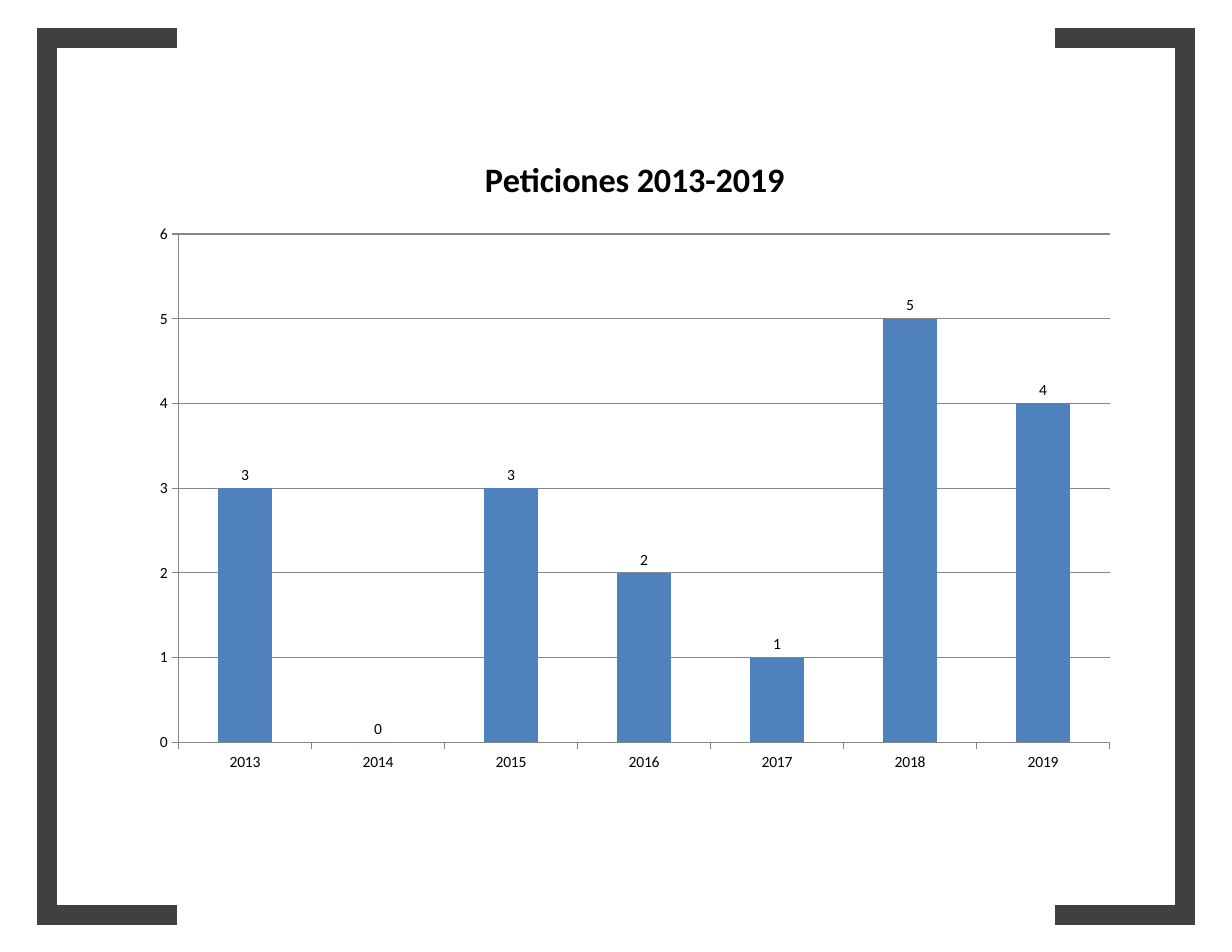
from dataclasses import dataclass

from lxml.etree import SubElement
from pptx import Presentation
from pptx.chart.data import CategoryChartData
from pptx.dml.color import RGBColor as RGB
from pptx.enum.chart import XL_CHART_TYPE as ChartType
from pptx.enum.chart import XL_LABEL_POSITION as LabelPos
from pptx.enum.chart import XL_TICK_MARK as Tick
from pptx.enum.shapes import MSO_CONNECTOR as Connector
from pptx.oxml.ns import qn
from pptx.util import Inches, Pt


@dataclass(frozen=True)
class Theme:
    font: str = "Calibri"
    text: RGB = RGB.from_string("000000")
    frame: RGB = RGB.from_string("404040")
    bar: RGB = RGB.from_string("4F81BD")
    grid: RGB = RGB.from_string("868686")
    title_size: Pt = Pt(22)
    label_size: Pt = Pt(10)
    frame_width: Pt = Pt(13)
    grid_width: Pt = Pt(0.75)


class Deck:
    COLS, ROWS = 132, 102

    def __init__(self, theme):
        self.theme = theme
        self.prs = Presentation()
        self.prs.slide_width, self.prs.slide_height = Inches(11), Inches(8.5)
        self.s = self.prs.slides.add_slide(self.prs.slide_layouts[6])

    def x(self, col):
        return round(self.prs.slide_width * col / self.COLS)

    def y(self, row):
        return round(self.prs.slide_height * row / self.ROWS)

    def line(self, shapes, x1, y1, x2, y2):
        sp = shapes.add_connector(
            Connector.STRAIGHT, self.x(x1), self.y(y1), self.x(x2), self.y(y2))
        sp.line.color.rgb = self.theme.frame
        sp.line.width = self.theme.frame_width
        SubElement(sp._element.spPr, qn("a:effectLst"))

    def bracket(self, spine, edge, tip, top, bottom):
        shapes = self.s.shapes.add_group_shape().shapes
        self.line(shapes, spine, top, spine, bottom)
        for row in (top, bottom):
            self.line(shapes, edge, row, tip, row)

    def style_font(self, font, size, bold=False):
        font.name, font.size, font.bold = self.theme.font, size, bold
        font.color.rgb = self.theme.text

    def style_line(self, line):
        line.color.rgb = self.theme.grid
        line.width = self.theme.grid_width

    def column_chart(self, col, row, cols, rows, title, values):
        data = CategoryChartData()
        data.categories = list(values)
        data.add_series("Series 1", list(values.values()))
        chart = self.s.shapes.add_chart(
            ChartType.COLUMN_CLUSTERED, self.x(col), self.y(row),
            self.x(cols), self.y(rows), data).chart
        self.style_font(chart.font, self.theme.label_size)
        chart.has_legend = False
        chart.has_title = True
        chart.chart_title.include_in_layout = False
        p = chart.chart_title.text_frame.paragraphs[0]
        p.text = title
        self.style_font(p.font, self.theme.title_size, bold=True)

        for axis in (chart.category_axis, chart.value_axis):
            axis.major_tick_mark = Tick.OUTSIDE
            axis.minor_tick_mark = Tick.NONE
            self.style_line(axis.format.line)
        axis = chart.value_axis
        axis.minimum_scale, axis.maximum_scale, axis.major_unit = 0, 6, 1
        axis.has_major_gridlines = True
        self.style_line(axis.major_gridlines.format.line)

        plot = chart.plots[0]
        plot.gap_width = 150
        plot.vary_by_categories = False
        fill = plot.series[0].format.fill
        fill.solid()
        fill.fore_color.rgb = self.theme.bar
        plot.has_data_labels = True
        labels = plot.data_labels
        labels.show_value = True
        labels.position = LabelPos.OUTSIDE_END
        self.style_font(labels.font, self.theme.label_size)


def main():
    deck = Deck(Theme())
    requests = dict(zip(map(str, range(2013, 2020)), (3, 0, 3, 2, 1, 5, 4)))
    deck.column_chart(15, 14, 106, 70, "Peticiones 2013-2019", requests)
    deck.bracket(spine=5, edge=4, tip=19, top=4.1, bottom=98)
    deck.bracket(spine=127, edge=128, tip=113, top=4.1, bottom=98)
    deck.prs.save("out.pptx")


if __name__ == "__main__":
    main()
